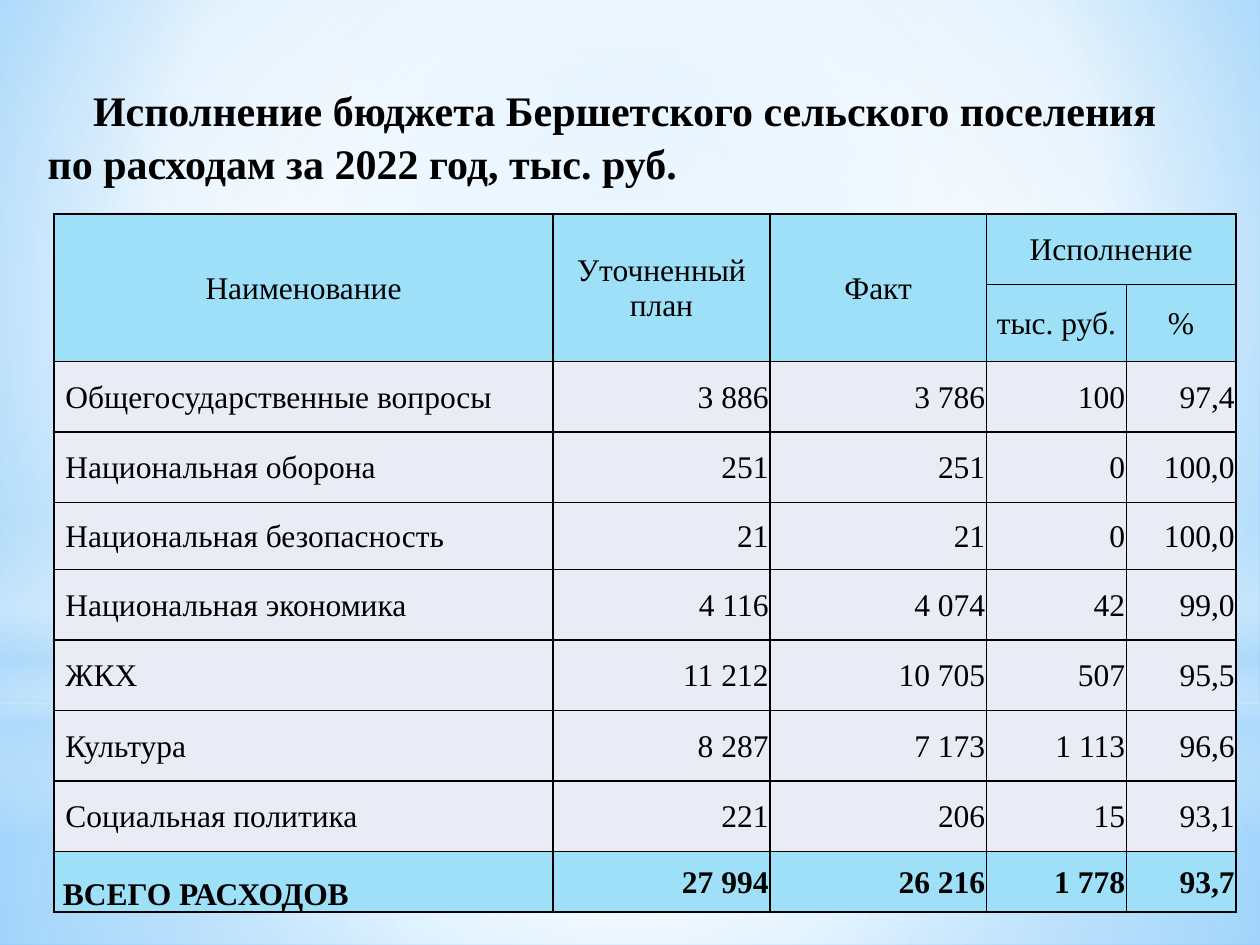
import pptx
import pptx.util
import pptx.dml.color
import pptx.enum.shapes
import pptx.enum.text
import pptx.oxml
import pptx.oxml.ns

Inches = pptx.util.Inches
Shape = pptx.enum.shapes.MSO_SHAPE
Align = pptx.enum.text.PP_ALIGN
Anchor = pptx.enum.text.MSO_ANCHOR
qn = pptx.oxml.ns.qn

FONT = "Times New Roman"
BLACK, HEADER_FILL, BODY_FILL = "000000", "9EE0F8", "E9EBF5"
TITLE = ["Исполнение бюджета Бершетского сельского поселения",
         "по расходам за 2022 год, тыс. руб."]
HEADER = [
    ["Наименование", "Уточненный план", "Факт", "Исполнение", ""],
    ["", "", "", "тыс. руб.", "%"],
]
EXPENSES = [
    ["Общегосударственные вопросы", "3 886", "3 786", "100", "97,4"],
    ["Национальная оборона", "251", "251", "0", "100,0"],
    ["Национальная безопасность", "21", "21", "0", "100,0"],
    ["Национальная экономика", "4 116", "4 074", "42", "99,0"],
    ["ЖКХ", "11 212", "10 705", "507", "95,5"],
    ["Культура", "8 287", "7 173", "1 113", "96,6"],
    ["Социальная политика", "221", "206", "15", "93,1"],
]
TOTAL = ["ВСЕГО РАСХОДОВ", "27 994", "26 216", "1 778", "93,7"]
ROWS = HEADER + EXPENSES + [TOTAL]
COLUMN_WIDTHS = [3.96, 1.72, 1.72, 1.11, 0.87]
ROW_HEIGHTS = [0.56] * 4 + [0.53] + [0.56] * 4 + [0.48]
MERGES = [((0, 0), (1, 0)), ((0, 1), (1, 1)), ((0, 2), (1, 2)), ((0, 3), (0, 4))]

BACKGROUND = [(0, "9ED5FF", 100), (60, "FFFFFF", 100), (100, "5BB9FF", 100)]
CENTRE = (50, 50, 50, 50)
GLOWS = [
    (Shape.RECTANGLE, (0, 5.58, 10, 1.92), CENTRE,
     [(0, "FFFFFF", 91), (37, "FFFFFF", 76), (100, "B4DCFA", 79)]),
    (Shape.RECTANGLE, (0, 0, 10, 5.58), CENTRE,
     [(0, "FFFFFF", 89), (48, "FFFFFF", 62), (100, "B4DCFA", 79)]),
    (Shape.RECTANGLE, (0, 4.12, 10, 2.5), None,
     [(0, "FFFFFF", 0), (29, "FFFFFF", 30), (45, "B4DCFA", 40),
      (55, "FFFFFF", 26), (65, "B4DCFA", 60), (100, "FFFFFF", 0)]),
    (Shape.OVAL, (0, 1.75, 10, 5.58), CENTRE,
     [(0, "FFFFFF", 100), (56, "FFFFFF", 0)]),
]


def color(value):
    return pptx.dml.color.RGBColor.from_string(value)


def apply_gradient(owner, element, stops, focus):
    owner.fill.solid()
    marks = "".join(
        f'<a:gs pos="{place * 1000}"><a:srgbClr val="{value}">'
        f'<a:alpha val="{opacity * 1000}"/></a:srgbClr></a:gs>'
        for place, value, opacity in stops)
    if focus:
        left, top, right, bottom = (side * 1000 for side in focus)
        direction = (f'<a:path path="circle"><a:fillToRect l="{left}" t="{top}" '
                     f'r="{right}" b="{bottom}"/></a:path>')
    else:
        direction = '<a:lin ang="5400000" scaled="0"/>'
    gradient = pptx.oxml.parse_xml(
        f'<a:gradFill {pptx.oxml.ns.nsdecls("a")} rotWithShape="1">'
        f'<a:gsLst>{marks}</a:gsLst>{direction}</a:gradFill>')
    solid = next(element.iter(qn("a:solidFill")))
    solid.getparent().replace(solid, gradient)


def add_span(para, text, size, bold):
    span = para.add_run()
    span.text = text
    span.font.name = FONT
    span.font.size = pptx.util.Pt(size)
    span.font.bold = bold
    span.font.color.rgb = color(BLACK)


def indent(para, margin, first=0):
    properties = para._p.get_or_add_pPr()
    properties.set("marL", str(Inches(margin)))
    properties.set("indent", str(Inches(first)))


def add_borders(cell):
    properties = cell._tc.get_or_add_tcPr()
    for place, side in enumerate(("lnL", "lnR", "lnT", "lnB")):
        properties.insert(place, pptx.oxml.parse_xml(
            f'<a:{side} {pptx.oxml.ns.nsdecls("a")} w="12700"><a:solidFill>'
            f'<a:srgbClr val="{BLACK}"/></a:solidFill></a:{side}>'))


def add_title(page):
    box = page.shapes.add_textbox(Inches(0.28), Inches(0.6), Inches(9.45), Inches(0.71))
    box.text_frame.word_wrap = True
    for number, line in enumerate(TITLE):
        para = box.text_frame.paragraphs[0] if number == 0 else box.text_frame.add_paragraph()
        para.alignment = Align.LEFT
        para.line_spacing = 1.05
        indent(para, 0, 0.36 if number == 0 else 0)
        add_span(para, line, 24, True)


def fill_cell(cell, row, column, text):
    heading, total = row < len(HEADER), row == len(ROWS) - 1
    cell.fill.solid()
    cell.fill.fore_color.rgb = color(HEADER_FILL if heading or total else BODY_FILL)
    add_borders(cell)
    cell.margin_left = cell.margin_right = cell.margin_top = Inches(0.01)
    cell.margin_bottom = 0
    cell.vertical_anchor = Anchor.BOTTOM if total and column == 0 else Anchor.MIDDLE
    if not text:
        return
    para = cell.text_frame.paragraphs[0]
    if heading:
        para.alignment = Align.CENTER
    elif column:
        para.alignment = Align.RIGHT
    else:
        para.alignment = Align.LEFT
        indent(para, 0.06 if total else 0.08)
    add_span(para, text, 18, total)


def add_budget_table(page):
    table = page.shapes.add_table(
        len(ROWS), len(COLUMN_WIDTHS), Inches(0.43), Inches(1.7),
        Inches(sum(COLUMN_WIDTHS)), Inches(sum(ROW_HEIGHTS))).table
    table.first_row = table.horz_banding = False
    for column, width in zip(table.columns, COLUMN_WIDTHS):
        column.width = Inches(width)
    for row, height in zip(table.rows, ROW_HEIGHTS):
        row.height = Inches(height)
    for start, end in MERGES:
        table.cell(*start).merge(table.cell(*end))
    for row, texts in enumerate(ROWS):
        for column, text in enumerate(texts):
            fill_cell(table.cell(row, column), row, column, text)


def main():
    deck = pptx.Presentation()
    deck.slide_width, deck.slide_height = Inches(10), Inches(7.5)
    page = deck.slides.add_slide(deck.slide_layouts[6])
    apply_gradient(page.background, page.element, BACKGROUND, (20, 10, 20, 60))
    for kind, place, focus, stops in GLOWS:
        glow = page.shapes.add_shape(kind, *map(Inches, place))
        glow.shadow.inherit = False
        glow.line.fill.background()
        apply_gradient(glow, glow.element, stops, focus)
    add_title(page)
    add_budget_table(page)
    deck.save("out.pptx")


if __name__ == "__main__":
    main()
